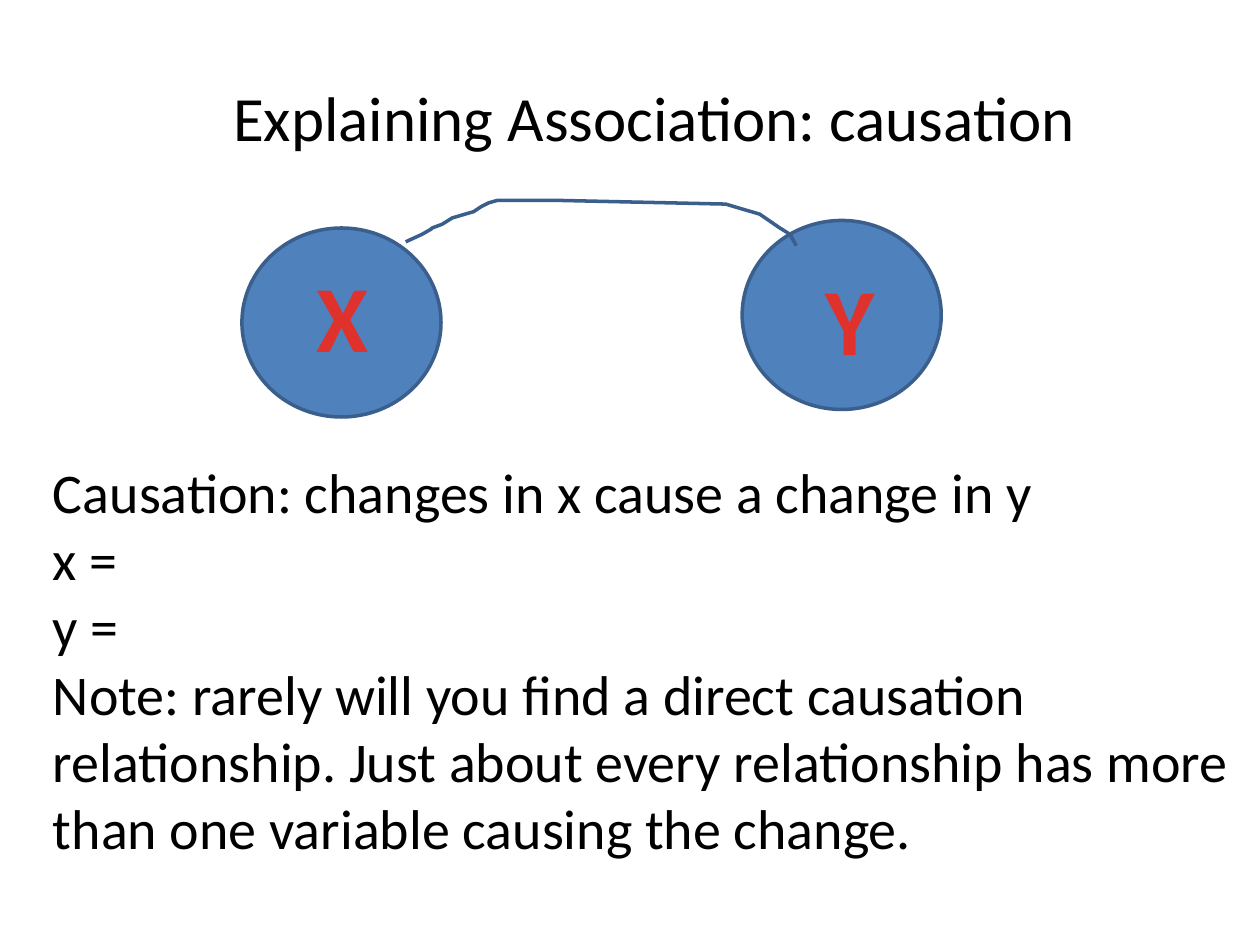
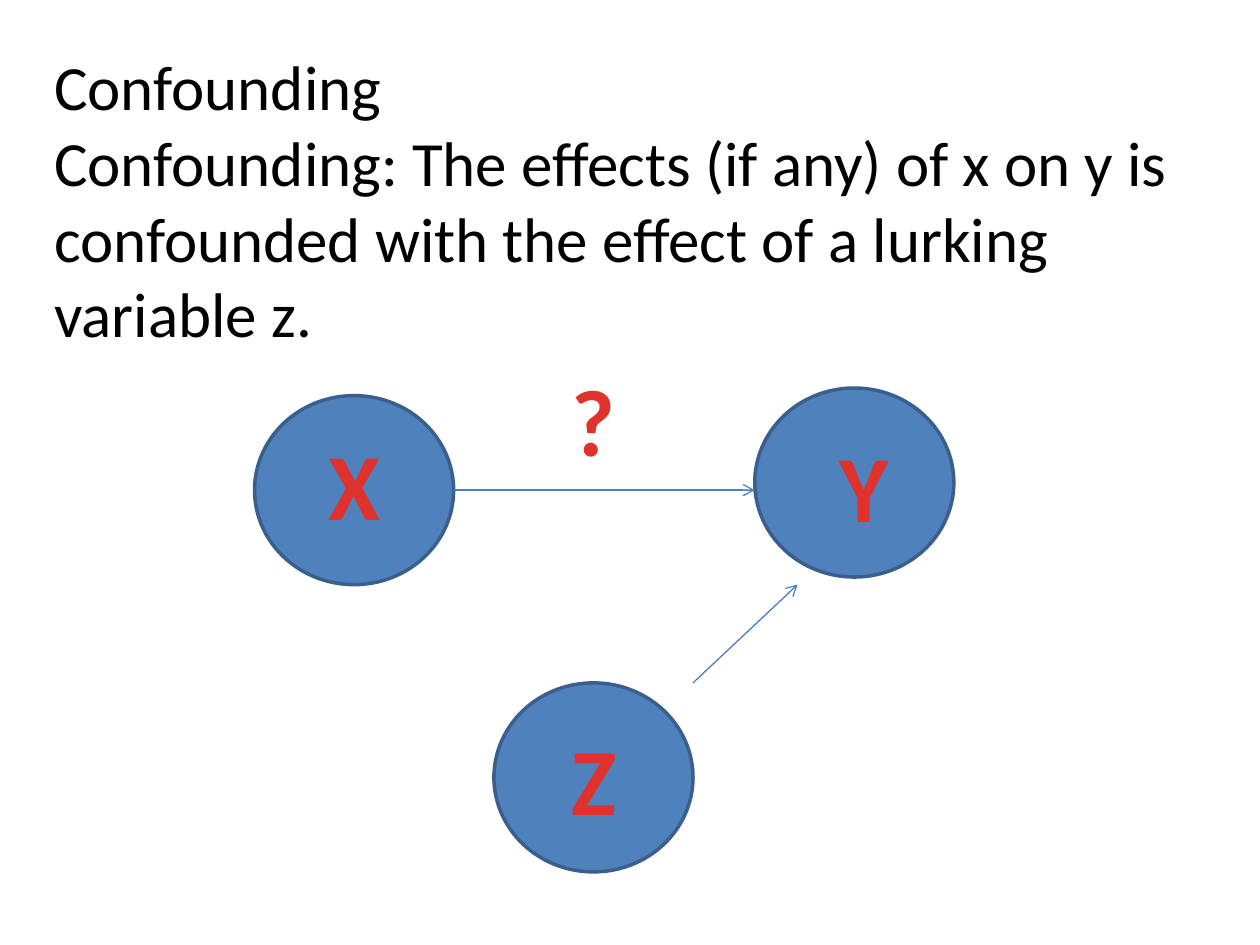
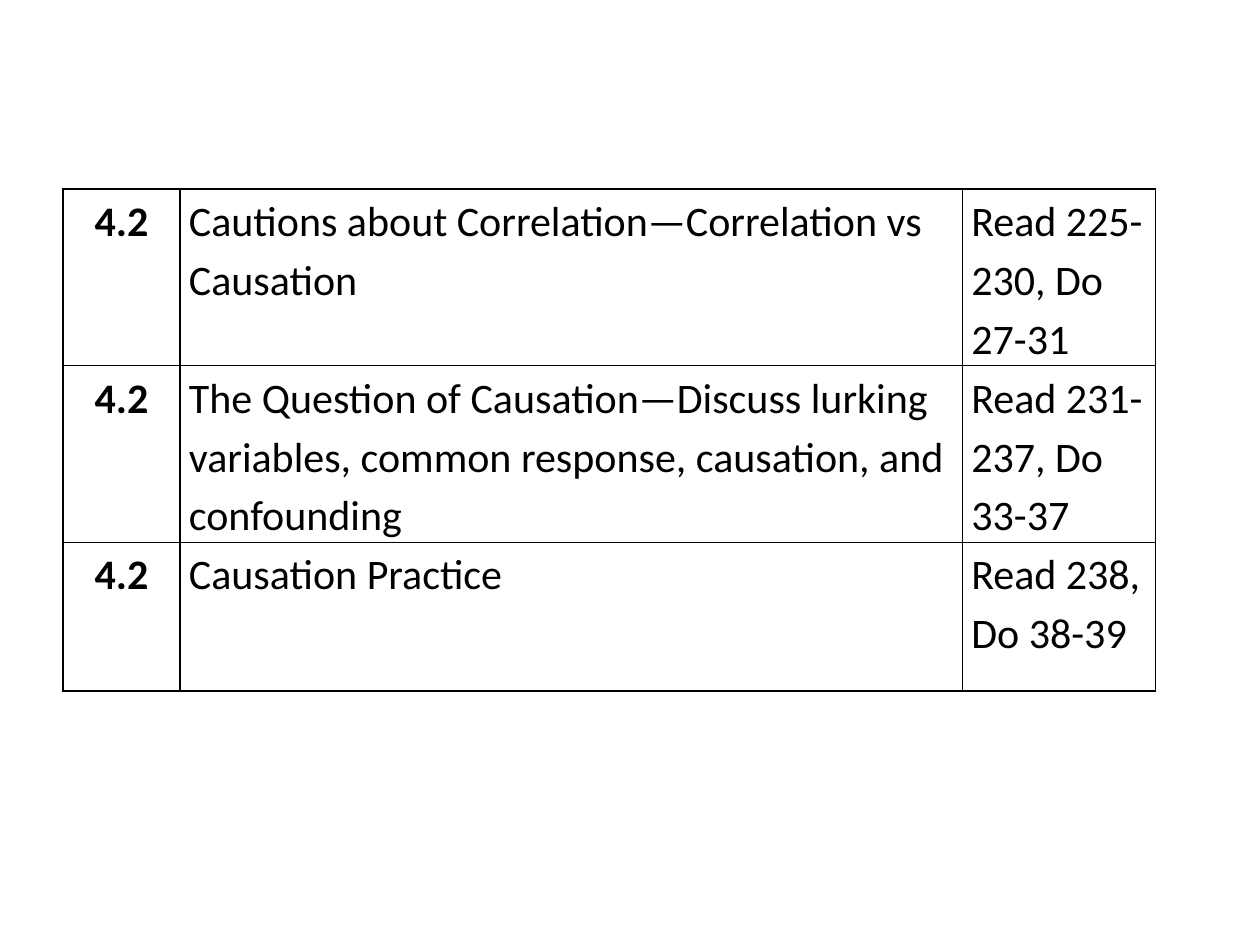
from pptx import Presentation
from pptx.dml.color import RGBColor
from pptx.enum import shapes, text
from pptx.oxml import parse_xml
from pptx.oxml.ns import nsdecls, qn
from pptx.util import Inches, Pt

BLACK = RGBColor(0x00, 0x00, 0x00)
BLUE = RGBColor(0x4F, 0x81, 0xBD)
EDGE = RGBColor(0x3A, 0x5F, 0x8C)
ARROW = RGBColor(0x4B, 0x7E, 0xBC)
RED = RGBColor(0xE0, 0x32, 0x2D)
FONT = "Calibri"
WIDE, HIGH = 1.58, 1.5


def put(shape, words, size, box, color=BLACK, bold=False, align=None):
    """Place a text shape and fill it with plain, unbulleted paragraphs."""
    shape.left, shape.top, shape.width, shape.height = map(Inches, box)
    frame = shape.text_frame
    frame.text = words
    frame.auto_size = text.MSO_AUTO_SIZE.NONE
    for para in frame.paragraphs:
        para.alignment = align
        para.space_before = Pt(0)
        props = para._p.get_or_add_pPr()
        props.set("marL", "0")
        props.set("indent", "0")
        props.append(parse_xml(f"<a:buNone {nsdecls('a')}/>"))
        for run in para.runs:
            run.font.name, run.font.size = FONT, Pt(size)
            run.font.color.rgb, run.font.bold = color, bold
    return frame


def mark(slide, sign, x, y, w):
    """Add a large red letter."""
    box = slide.shapes.add_textbox(0, 0, 0, 0)
    frame = put(box, sign, 54, (x, y, w, 1.01), RED, True, text.PP_ALIGN.CENTER)
    frame.word_wrap = False
    frame.paragraphs[0].runs[0].font._element.set("spc", "50")


prs = Presentation()
prs.slide_width, prs.slide_height = Inches(10), Inches(7.5)

# Text of the two diagram slides
cause = prs.slides.add_slide(prs.slide_layouts[1])
put(cause.shapes.title, "Explaining Association: causation", 36,
    (1.75, 0.57, 6.96, 0.71), align=text.PP_ALIGN.LEFT).word_wrap = False
put(cause.placeholders[1], "\n".join([
    "Causation: changes in x cause a change in y",
    "x =",
    "y =",
    "Note: rarely will you find a direct causation",
    "relationship. Just about every relationship has more",
    "than one variable causing the change.",
]), 32, (0.32, 3.58, 9.64, 3.33))

confound = prs.slides.add_slide(prs.slide_layouts[1])
title = confound.shapes.title._element
title.getparent().remove(title)
put(confound.placeholders[1], "\n".join([
    "Confounding",
    "Confounding: The effects (if any) of x on y is",
    "confounded with the effect of a lurking variable z.",
]), 36, (0.33, 0.33, 9.33, 2.52))

# Variables: circle corner, then offset and width of the letter
nodes = [
    (cause, "Y", 5.89, 1.75, 0.56, 0.27, 0.6),
    (cause, "X", 1.92, 1.81, 0.48, 0.19, 0.63),
    (confound, "Y", 5.99, 3.08, 0.57, 0.27, 0.6),
    (confound, "X", 2.02, 3.14, 0.48, 0.19, 0.63),
    (confound, "Z", 3.92, 5.42, 0.51, 0.25, 0.57),
]
for slide, sign, x, y, dx, dy, w in nodes:
    disc = slide.shapes.add_shape(shapes.MSO_SHAPE.OVAL, Inches(x), Inches(y),
                                  Inches(WIDE), Inches(HIGH))
    disc.shadow.inherit = False
    disc.fill.solid()
    disc.fill.fore_color.rgb = BLUE
    disc.line.color.rgb, disc.line.width = EDGE, Pt(2)
    mark(slide, sign, x + dx, y + dy, w)
mark(confound, "?", 4.43, 2.82, 0.56)

# Hand-drawn link from X to Y, in hundredths of an inch
bends = [(322, 192), (335, 186), (342, 182), (343, 181), (351, 178),
         (359, 173), (376, 168), (382, 164), (388, 161), (395, 159),
         (405, 159), (440, 159), (576, 162), (586, 165), (603, 170),
         (619, 181), (627, 186), (632, 195)]
pen = cause.shapes.build_freeform(*bends[0], scale=Inches(0.01))
pen.add_line_segments(bends[1:], close=False)
link = pen.convert_to_shape()
link.shadow.inherit = False
link.fill.background()
link.line.color.rgb, link.line.width = EDGE, Pt(2)

# Arrows into Y
for ends in [(3.6, 3.89, 5.99, 3.89), (5.5, 5.42, 6.33, 4.64)]:
    arrow = confound.shapes.add_connector(shapes.MSO_CONNECTOR.STRAIGHT,
                                          *map(Inches, ends))
    arrow.line.color.rgb, arrow.line.width = ARROW, Pt(0.75)
    arrow.line._get_or_add_ln().append(
        parse_xml(f'<a:tailEnd {nsdecls("a")} type="arrow"/>'))
    arrow._element.spPr.append(parse_xml(f"<a:effectLst {nsdecls('a')}/>"))

# Reading plan
plan = prs.slides.add_slide(prs.slide_layouts[6])
rows = [
    ("4.2", "Cautions about Correlation—Correlation vs Causation",
     "Read 225-230, Do 27-31"),
    ("4.2", "The Question of Causation—Discuss lurking variables, "
     "common response, causation, and confounding", "Read 231-237, Do 33-37"),
    ("4.2", "Causation Practice", "Read 238, Do 38-39"),
]
grid = plan.shapes.add_table(3, 3, Inches(0.5), Inches(1.5),
                             Inches(8.67), Inches(3.54)).table
grid.first_row = grid.horz_banding = False
for col, w in zip(grid.columns, (0.93, 6.21, 1.53)):
    col.width = Inches(w)
for r, row in enumerate(rows):
    grid.rows[r].height = Inches(1.18)
    for c, words in enumerate(row):
        cell = grid.cell(r, c)
        cell.margin_left = cell.margin_right = Inches(0.07)
        cell.margin_top = cell.margin_bottom = 0
        cell.text = words
        para = cell.text_frame.paragraphs[0]
        para.line_spacing = 1.15
        para.alignment = text.PP_ALIGN.LEFT if c else text.PP_ALIGN.CENTER
        font = para.runs[0].font
        font.name, font.size, font.bold = FONT, Pt(24), c == 0
        font.color.rgb = BLACK
        props = cell._tc.get_or_add_tcPr()
        for side in ("lnL", "lnR", "lnT", "lnB"):
            props.append(parse_xml(
                f'<a:{side} {nsdecls("a")} w="{Pt(1)}"><a:solidFill>'
                f'<a:srgbClr val="{BLACK}"/></a:solidFill></a:{side}>'))
        cell.fill.background()
        props.append(props.find(qn("a:noFill")))

prs.save("out.pptx")
